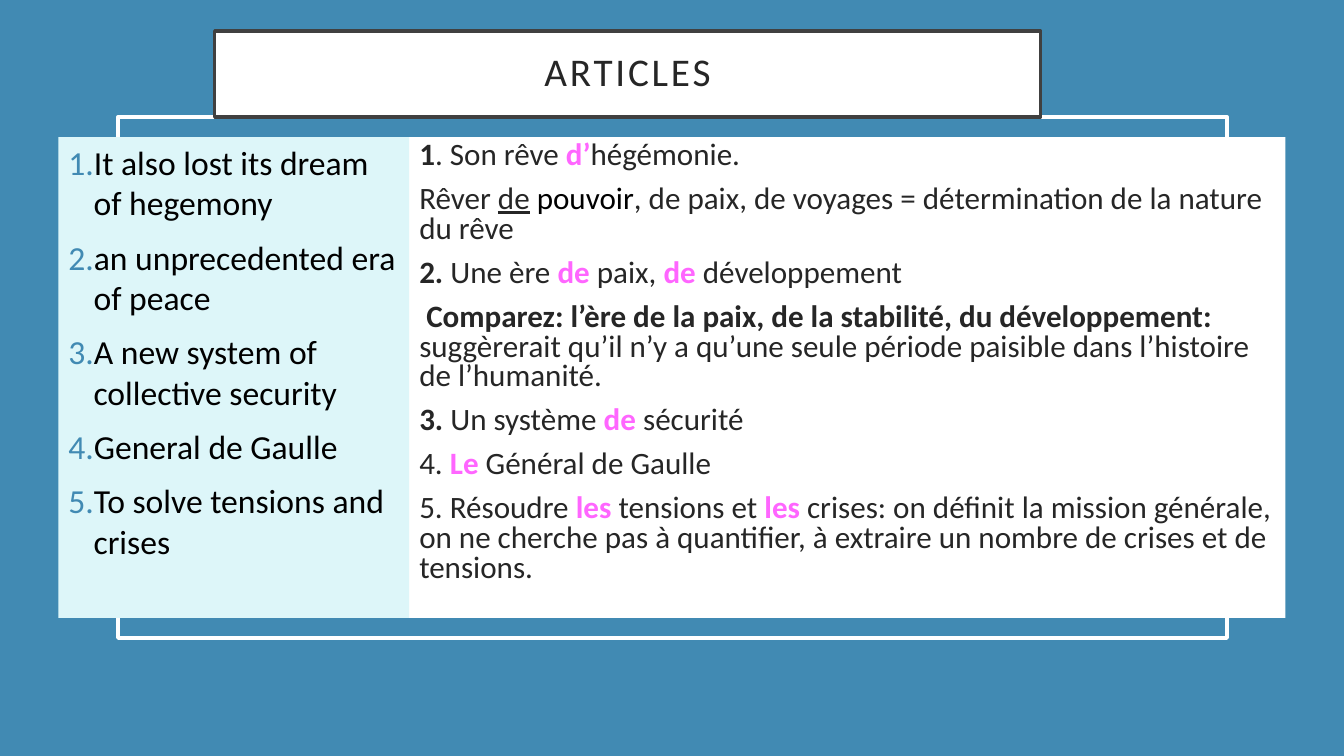
"""Build the slide comparing English phrases with the French use of articles."""
from lxml.etree import SubElement
from pptx import Presentation
from pptx.dml.color import RGBColor
from pptx.enum.shapes import MSO_SHAPE as Shape
from pptx.enum.text import MSO_ANCHOR as Anchor, PP_ALIGN as Align
from pptx.oxml.ns import qn
from pptx.util import Inches, Pt

BLUE = RGBColor(0x41, 0x8A, 0xB3)
WHITE = RGBColor(0xFF, 0xFF, 0xFF)
PALE = RGBColor(0xDD, 0xF6, 0xF9)
CHARCOAL = RGBColor(0x40, 0x40, 0x40)
INK = RGBColor(0x26, 0x26, 0x26)
BLACK = RGBColor(0, 0, 0)
PINK = RGBColor(0xFF, 0x66, 0xFF)
FONT = "Calibri"

TITLE = "ARTICLES"
PHRASES = [
    "It also lost its dream of hegemony",
    "an unprecedented era of peace",
    "A new system of collective security",
    "General de Gaulle",
    "To solve tensions and crises",
]
STYLES = {
    "plain": (INK, False, False),
    "bold": (INK, True, False),
    "article": (PINK, True, False),
    "underlined": (INK, False, True),
    "black": (BLACK, False, False),
}
NOTES = [
    [("1", "bold"), (". Son rêve ", "plain"), ("d’", "article"), ("hégémonie.", "plain")],
    [("Rêver ", "plain"), ("de", "underlined"), (" ", "plain"), ("pouvoir", "black"),
     (", de paix, de voyages = détermination de la nature du rêve", "plain")],
    [("2. ", "bold"), ("Une ère ", "plain"), ("de ", "article"), ("paix, ", "plain"),
     ("de ", "article"), ("développement", "plain")],
    [(" ", "plain"),
     ("Comparez: l’ère de la paix, de la stabilité, du développement: ", "bold"),
     ("suggèrerait qu’il n’y a qu’une seule période paisible dans l’histoire "
      "de l’humanité.", "plain")],
    [("3. ", "bold"), ("Un système ", "plain"), ("de ", "article"), ("sécurité", "plain")],
    [("4. ", "plain"), ("Le ", "article"), ("Général de Gaulle", "plain")],
    [("5. Résoudre ", "plain"), ("les", "article"), (" tensions et ", "plain"),
     ("les ", "article"),
     ("crises: on définit la mission générale, on ne cherche pas à quantifier, "
      "à extraire un nombre de crises et de tensions.", "plain")],
]

WIDTH, HEIGHT = 13.33, 7.5
PANEL_TOP, PANEL_HEIGHT = 1.36, 4.77
PHRASES_LEFT, PHRASES_WIDTH, NOTES_WIDTH = 0.58, 3.48, 8.69
FRAME_GAP = 0.2


def add_box(slide, left, top, width, height, fill=None, line=None):
    box = slide.shapes.add_shape(
        Shape.RECTANGLE, Inches(left), Inches(top), Inches(width), Inches(height))
    box.shadow.inherit = False
    if fill is None:
        box.fill.background()
    else:
        box.fill.solid()
        box.fill.fore_color.rgb = fill
    if line is None:
        box.line.fill.background()
    else:
        box.line.color.rgb = line
        box.line.width = Pt(2.5)
    box.text_frame.word_wrap = True
    box.text_frame.vertical_anchor = Anchor.TOP
    return box


def format_run(run, size, color, bold=False, underline=False):
    font = run.font
    font.name, font.size, font.bold, font.underline = FONT, Pt(size), bold, underline
    font.color.rgb = color


def add_paragraphs(frame, count):
    for index in range(count):
        paragraph = frame.add_paragraph() if index else frame.paragraphs[0]
        paragraph.alignment = Align.LEFT
        paragraph.space_before = Pt(10 if index else 0)
    return frame.paragraphs


def number_paragraph(paragraph):
    props = paragraph._p.get_or_add_pPr()
    props.set("marL", str(Inches(0.25)))
    props.set("indent", str(-Inches(0.25)))
    color = SubElement(props, qn("a:buClr"))
    SubElement(color, qn("a:srgbClr"), val=str(BLUE))
    SubElement(props, qn("a:buFont"), typeface=FONT)
    SubElement(props, qn("a:buAutoNum"), type="arabicPeriod")


def add_title(slide):
    frame = add_box(slide, 2.13, 0.31, 8.19, 0.85, WHITE, CHARCOAL).text_frame
    frame.vertical_anchor = Anchor.MIDDLE
    frame.margin_left = frame.margin_right = Inches(0.2)
    frame.margin_top = frame.margin_bottom = Inches(0.2)
    frame.text = TITLE
    heading = frame.paragraphs[0]
    heading.alignment, heading.line_spacing = Align.CENTER, 0.9
    format_run(heading.runs[0], 28, INK)
    heading.runs[0].font._element.set("spc", "200")


def add_phrases(slide):
    box = add_box(slide, PHRASES_LEFT, PANEL_TOP, PHRASES_WIDTH, PANEL_HEIGHT, PALE)
    for paragraph, phrase in zip(add_paragraphs(box.text_frame, len(PHRASES)), PHRASES):
        number_paragraph(paragraph)
        paragraph.text = phrase
        format_run(paragraph.runs[0], 24, BLACK)


def add_notes(slide):
    box = add_box(slide, PHRASES_LEFT + PHRASES_WIDTH, PANEL_TOP,
                  NOTES_WIDTH, PANEL_HEIGHT, WHITE)
    for paragraph, note in zip(add_paragraphs(box.text_frame, len(NOTES)), NOTES):
        paragraph.line_spacing = 0.8
        for words, style in note:
            run = paragraph.add_run()
            run.text = words
            format_run(run, 22.2, *STYLES[style])


def main():
    deck = Presentation()
    deck.slide_width, deck.slide_height = Inches(WIDTH), Inches(HEIGHT)
    slide = deck.slides.add_slide(deck.slide_layouts[6])
    add_box(slide, 0, 0, WIDTH, HEIGHT, BLUE)
    add_box(slide, 1.37, PANEL_TOP, 10.6, PANEL_HEIGHT, WHITE)
    add_box(slide, 1.37 - FRAME_GAP, PANEL_TOP - FRAME_GAP,
            10.6 + 2 * FRAME_GAP, PANEL_HEIGHT + 2 * FRAME_GAP, line=WHITE)
    add_title(slide)
    add_phrases(slide)
    add_notes(slide)
    deck.save("out.pptx")


if __name__ == "__main__":
    main()
